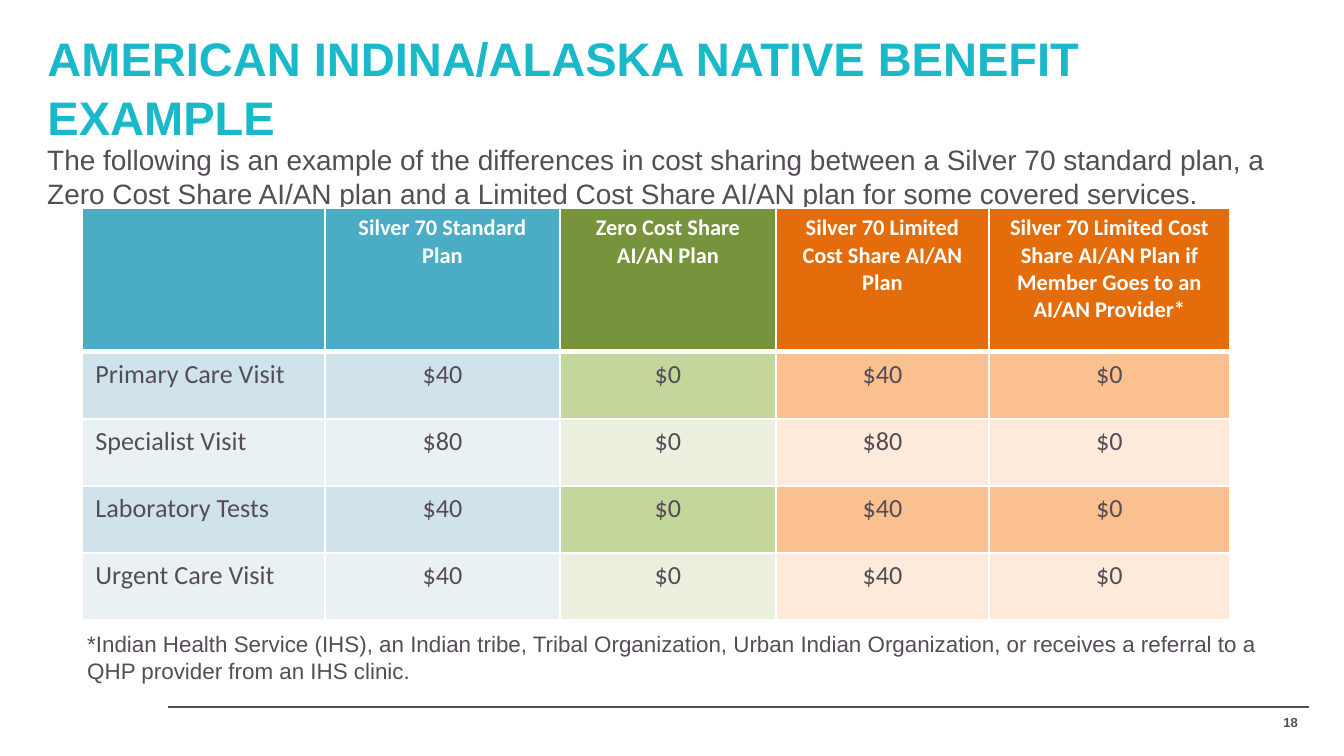
import pptx
import pptx.util
import pptx.dml.color
import pptx.enum.shapes
import pptx.enum.text
import pptx.oxml
import pptx.oxml.ns
import lxml.etree

RGB = pptx.dml.color.RGBColor
ALIGN = pptx.enum.text.PP_ALIGN
ANCHOR = pptx.enum.text.MSO_ANCHOR

W, H = 1344, 756
EMU_PER_PX = pptx.util.Inches(10) / W

WHITE = RGB(0xFF, 0xFF, 0xFF)
TEAL = RGB(0x19, 0xB9, 0xCA)
GREY = RGB(0x55, 0x4D, 0x56)

# Column colours: header, odd rows, even rows
BLUES = RGB(0x4B, 0xAC, 0xC6), RGB(0xD0, 0xE3, 0xEA), RGB(0xE9, 0xF1, 0xF5)
GREENS = RGB(0x77, 0x93, 0x3C), RGB(0xC3, 0xD6, 0x9B), RGB(0xEB, 0xF1, 0xDE)
ORANGES = RGB(0xE4, 0x6C, 0x0A), RGB(0xFA, 0xC0, 0x90), RGB(0xFD, 0xEA, 0xDA)
COLUMN_COLORS = [BLUES, BLUES, GREENS, ORANGES, ORANGES]

COLUMN_WIDTHS = [243, 235, 216, 213, 241]
HEADER_HEIGHT, ROW_HEIGHT = 144, 67
ROWS = [
    ["", "Silver 70 Standard Plan", "Zero Cost Share AI/AN Plan",
     "Silver 70 Limited Cost Share AI/AN Plan",
     "Silver 70 Limited Cost Share AI/AN Plan if Member Goes to an AI/AN Provider*"],
    ["Primary Care Visit", "$40", "$0", "$40", "$0"],
    ["Specialist Visit", "$80", "$0", "$80", "$0"],
    ["Laboratory Tests", "$40", "$0", "$40", "$0"],
    ["Urgent Care Visit", "$40", "$0", "$40", "$0"],
]
TITLE = "AMERICAN INDINA/ALASKA NATIVE BENEFIT EXAMPLE"
INTRO = ("The following is an example of the differences in cost sharing between "
         "a Silver 70 standard plan, a Zero Cost Share AI/AN plan and a Limited "
         "Cost Share AI/AN plan for some covered services.")
FOOTNOTE = ("*Indian Health Service (IHS), an Indian tribe, Tribal Organization, "
            "Urban Indian Organization, or receives a referral to a QHP provider "
            "from an IHS clinic.")


def px(n):
    return pptx.util.Emu(round(n * EMU_PER_PX))


def set_text(tf, text, size, color, bold=False, align=ALIGN.LEFT, font="Arial"):
    tf.text = text
    p = tf.paragraphs[0]
    p.alignment = align
    p.font.size = pptx.util.Pt(size)
    p.font.name = font
    p.font.bold = bold
    p.font.color.rgb = color
    return p


def add_title(s, x, y, w, h):
    sp = s.shapes.title
    sp.left, sp.top, sp.width, sp.height = px(x), px(y), px(w), px(h)
    tf = sp.text_frame
    tf.word_wrap = True
    tf.auto_size = pptx.enum.text.MSO_AUTO_SIZE.NONE
    tf.vertical_anchor = ANCHOR.TOP
    set_text(tf, TITLE, 25.2, TEAL, bold=True).line_spacing = 1.05


def add_text(s, x, y, w, h, text, size, anchor=ANCHOR.TOP, **style):
    tf = s.shapes.add_textbox(px(x), px(y), px(w), px(h)).text_frame
    tf.word_wrap = True
    tf.vertical_anchor = anchor
    set_text(tf, text, size, GREY, **style)


def set_borders(cell, **widths):
    tcPr = cell._tc.get_or_add_tcPr()
    for side in "LRTB":
        ln = lxml.etree.SubElement(tcPr, pptx.oxml.ns.qn(f"a:ln{side}"),
                                   w=str(pptx.util.Pt(widths.get(side, 1))))
        fill = lxml.etree.SubElement(ln, pptx.oxml.ns.qn("a:solidFill"))
        lxml.etree.SubElement(fill, pptx.oxml.ns.qn("a:srgbClr"), val=str(WHITE))


def add_benefit_table(s, x, y):
    heights = [HEADER_HEIGHT] + [ROW_HEIGHT] * (len(ROWS) - 1)
    table = s.shapes.add_table(len(ROWS), len(COLUMN_WIDTHS), px(x), px(y),
                               px(sum(COLUMN_WIDTHS)), px(sum(heights))).table
    for column, width in zip(table.columns, COLUMN_WIDTHS):
        column.width = px(width)
    for row, height in zip(table.rows, heights):
        row.height = px(height)

    for i, texts in enumerate(ROWS):
        header = i == 0
        for j, text in enumerate(texts):
            cell = table.cell(i, j)
            # A thick rule parts the header from the body
            set_borders(cell, B=3 if header else 1, T=3 if i == 1 else 1)
            cell.fill.solid()
            cell.fill.fore_color.rgb = COLUMN_COLORS[j][0 if header else 2 - i % 2]
            set_text(cell.text_frame, text, 12 if header else 14,
                     WHITE if header else GREY, bold=header, font="Calibri",
                     align=ALIGN.CENTER if header or j else ALIGN.LEFT)


def add_footer(s, x, y, w):
    rule = s.shapes.add_connector(pptx.enum.shapes.MSO_CONNECTOR.STRAIGHT,
                                  px(x), px(y), px(x + w), px(y))
    rule.line.color.rgb = GREY
    rule.line.width = pptx.util.Pt(1)
    lxml.etree.SubElement(rule._element.spPr, pptx.oxml.ns.qn("a:effectLst"))
    add_text(s, x + w - 106, y - 5, 108, 40, "18", 7, anchor=ANCHOR.MIDDLE,
             bold=True, align=ALIGN.RIGHT)


def main():
    prs = pptx.Presentation()
    prs.slide_width, prs.slide_height = px(W), px(H)
    s = prs.slides.add_slide(prs.slide_layouts.get_by_name("Title Only"))

    add_footer(s, 168, 707, 1141)
    add_title(s, 34, 20, 1277, 93)
    add_text(s, 34, 136, 1277, 114, INTRO, 15)
    add_benefit_table(s, 82, 208)
    add_text(s, 74, 624, 1206, 82, FOOTNOTE, 12)

    prs.save("out.pptx")


if __name__ == "__main__":
    main()
